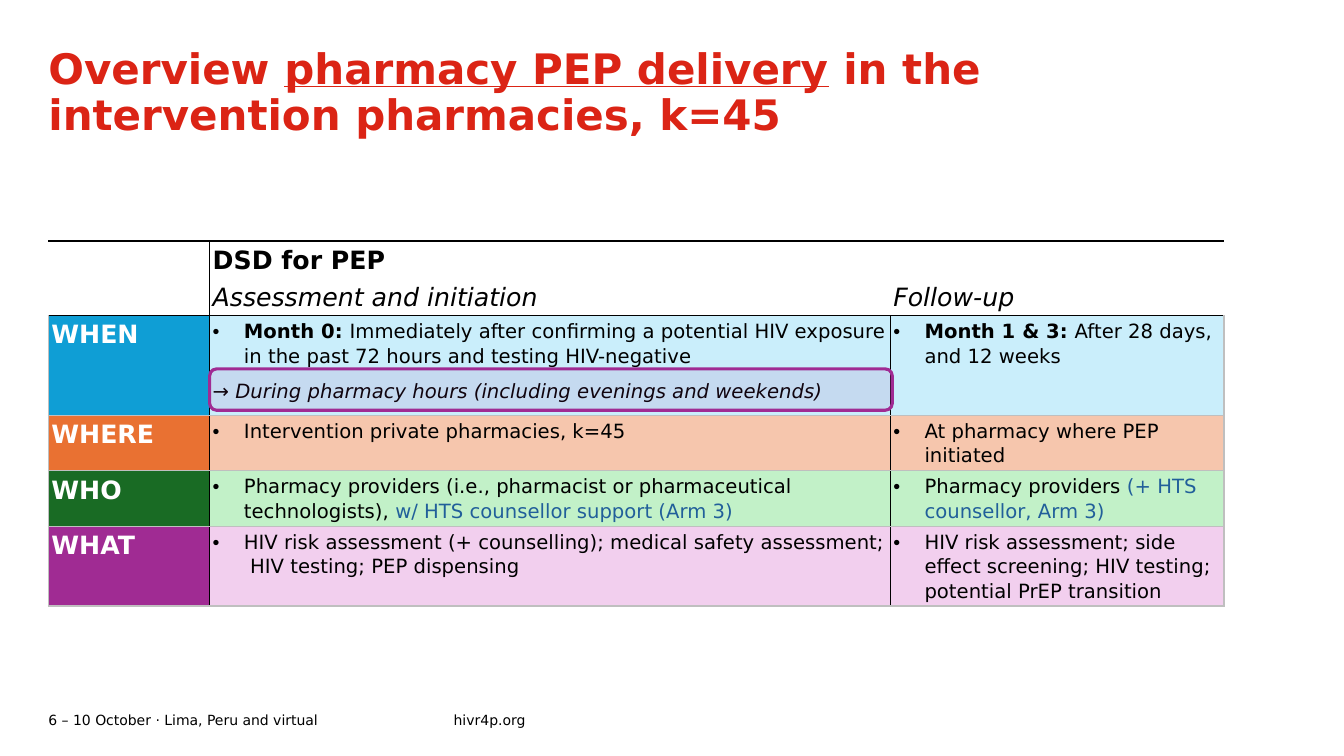
from lxml import etree
from pptx import Presentation
from pptx.dml.color import RGBColor
from pptx.enum.shapes import MSO_SHAPE
from pptx.enum.text import MSO_ANCHOR, MSO_AUTO_SIZE, PP_ALIGN
from pptx.oxml.ns import qn
from pptx.util import Inches, Pt

ROUNDED = MSO_SHAPE.ROUNDED_RECTANGLE
TOP, MIDDLE = MSO_ANCHOR.TOP, MSO_ANCHOR.MIDDLE
LEFT = PP_ALIGN.LEFT
NO_AUTOFIT = MSO_AUTO_SIZE.NONE

FONT = "DejaVu Sans"
BLACK, WHITE, GREY = "000000", "FFFFFF", "BFBFBF"
RED, BLUE, PURPLE = "DB2415", "215F9A", "A02B93"

COLUMN_WIDTHS = [1.6, 6.75, 3.31]
ROW_HEIGHTS = [0.29, 0.36, 0.99, 0.55, 0.49, 0.73]
HEADER_ROWS = 2

# Border colours of the grid lines, from top to bottom and from left to right
HORIZONTAL = [BLACK, None, BLACK, GREY, GREY, GREY, GREY]
HEADER_VERTICAL = [None, BLACK, None, None]
BODY_VERTICAL = [GREY, BLACK, BLACK, GREY]

# Label, label fill, row fill, then the paragraphs of the two detail cells
TOPICS = [
    ("WHEN", "0F9ED5", "CAEEFB",
     [[("Month 0: ", {"bold": True}),
       ("Immediately after confirming a potential HIV exposure in the past "
        "72 hours and testing HIV-negative", {})],
      [("→ During pharmacy hours (including evenings and weekends)",
        {"italic": True})]],
     [[("Month 1 & 3: ", {"bold": True}), ("After 28 days, and 12 weeks", {})]]),
    ("WHERE", "E97132", "F6C6AD",
     [[("Intervention private pharmacies, k=45", {})]],
     [[("At pharmacy where PEP initiated", {})]]),
    ("WHO", "196B24", "C2F1C8",
     [[("Pharmacy providers (i.e., pharmacist or pharmaceutical "
        "technologists), ", {}),
       ("w/ HTS counsellor support (Arm 3)", {"color": BLUE})]],
     [[("Pharmacy providers ", {}),
       ("(+ HTS counsellor, Arm 3)", {"color": BLUE})]]),
    ("WHAT", PURPLE, "F2CFEE",
     [[("HIV risk assessment (+ counselling); medical safety assessment;  "
        "HIV testing; PEP dispensing", {})]],
     [[("HIV risk assessment; side effect screening; HIV testing; "
        "potential PrEP transition", {})]]),
]


def rgb(value):
    return RGBColor.from_string(value)


def set_bullet(p):
    pPr = p._p.get_or_add_pPr()
    pPr.set("marL", str(Inches(0.31)))
    pPr.set("indent", str(Inches(-0.31)))
    etree.SubElement(pPr, qn("a:buFont"), typeface="Arial")
    etree.SubElement(pPr, qn("a:buChar"), char="•")


def set_borders(cell, **colors):
    """Draw the L, R, T and B borders in that order; None means no line."""
    tcPr = cell._tc.get_or_add_tcPr()
    for side, color in colors.items():
        ln = etree.SubElement(tcPr, qn("a:ln" + side), w=str(Pt(1)))
        if color is None:
            etree.SubElement(ln, qn("a:noFill"))
        else:
            fill = etree.SubElement(ln, qn("a:solidFill"))
            etree.SubElement(fill, qn("a:srgbClr"), val=color)


class SlideBuilder:
    """Holds the current slide and its text style."""

    def __init__(self, prs):
        self.s = prs.slides.add_slide(prs.slide_layouts[5])

    def run(self, p, text, size, color=BLACK, bold=False, italic=False,
            underline=False):
        r = p.add_run()
        r.text = text
        font = r.font
        font.name, font.size = FONT, Pt(size)
        font.bold, font.italic, font.underline = bold, italic, underline
        font.color.rgb = rgb(color)

    def frame(self, tf, anchor):
        tf.word_wrap = True
        tf.auto_size = NO_AUTOFIT
        tf.vertical_anchor = anchor
        tf.margin_left = tf.margin_right = tf.margin_top = tf.margin_bottom = 0
        p = tf.paragraphs[0]
        p.alignment = LEFT
        return p

    def title(self, runs):
        sp = self.s.shapes.title
        sp.left, sp.top = Inches(0.48), Inches(0.48)
        sp.width, sp.height = Inches(9.45), Inches(1.34)
        p = self.frame(sp.text_frame, TOP)
        p.line_spacing = 0.9
        for text, underline in runs:
            self.run(p, text, 30, RED, bold=True, underline=underline)

    def footer(self, text, left, width):
        sp = self.s.shapes.add_textbox(
            Inches(left), Inches(7.02), Inches(width), Inches(0.24))
        self.run(self.frame(sp.text_frame, MIDDLE), text, 10)

    def table(self, left, top):
        sp = self.s.shapes.add_table(
            len(ROW_HEIGHTS), len(COLUMN_WIDTHS), Inches(left), Inches(top),
            Inches(sum(COLUMN_WIDTHS)), Inches(sum(ROW_HEIGHTS)))
        table = sp.table
        table.first_row = table.horz_banding = False
        for column, width in zip(table.columns, COLUMN_WIDTHS):
            column.width = Inches(width)
        for row, height in zip(table.rows, ROW_HEIGHTS):
            row.height = Inches(height)
        for i, row in enumerate(table.rows):
            vertical = HEADER_VERTICAL if i < HEADER_ROWS else BODY_VERTICAL
            for j, cell in enumerate(row.cells):
                set_borders(cell, L=vertical[j], R=vertical[j + 1],
                            T=HORIZONTAL[i], B=HORIZONTAL[i + 1])
                cell.fill.solid()
                cell.fill.fore_color.rgb = rgb(WHITE)
                cell.margin_left = cell.margin_right = Inches(0.03)
                cell.margin_top = cell.margin_bottom = Inches(0.03)
        table.cell(0, 1).merge(table.cell(0, 2))
        return table

    def cell(self, cell, paragraphs, size=18, fill=WHITE, bullet=False):
        """Fill a cell; with bullet, its first paragraph gets one."""
        cell.fill.fore_color.rgb = rgb(fill)
        tf = cell.text_frame
        for k, runs in enumerate(paragraphs):
            p = tf.add_paragraph() if k else tf.paragraphs[0]
            if bullet and k == 0:
                set_bullet(p)
            p.line_spacing = 1.07
            p.space_after = Pt(8)
            for text, style in runs:
                self.run(p, text, size, **style)

    def highlight(self, left, top, width, height):
        sp = self.s.shapes.add_shape(
            ROUNDED, Inches(left), Inches(top), Inches(width), Inches(height))
        sp.shadow.inherit = False
        sp.fill.solid()
        sp.fill.fore_color.rgb = rgb(PURPLE)
        color = sp._element.spPr.find(qn("a:solidFill"))[0]
        etree.SubElement(color, qn("a:alpha"), val="10000")
        sp.line.color.rgb = rgb(PURPLE)
        sp.line.width = Pt(2.25)


def main():
    prs = Presentation()
    prs.slide_width, prs.slide_height = Inches(13.33), Inches(7.5)
    slide = SlideBuilder(prs)
    slide.footer("6 – 10 October · Lima, Peru and virtual", 0.48, 4.02)
    slide.footer("hivr4p.org", 4.5, 1.93)
    slide.title([("Overview ", False), ("pharmacy PEP delivery", True),
                 (" in the intervention pharmacies, k=45", False)])

    table = slide.table(0.48, 2.39)
    slide.cell(table.cell(0, 1), [[("DSD for PEP", {"bold": True})]])
    for j, heading in enumerate(["Assessment and initiation", "Follow-up"], 1):
        slide.cell(table.cell(1, j), [[(heading, {"italic": True})]])
    for i, topic in enumerate(TOPICS, HEADER_ROWS):
        label, label_fill, row_fill, *details = topic
        slide.cell(table.cell(i, 0),
                   [[(label, {"color": WHITE, "bold": True})]], fill=label_fill)
        for j, paragraphs in enumerate(details, 1):
            slide.cell(table.cell(i, j), paragraphs, 14, row_fill, bullet=True)

    slide.highlight(2.08, 3.66, 6.77, 0.41)
    prs.save("out.pptx")


if __name__ == "__main__":
    main()
